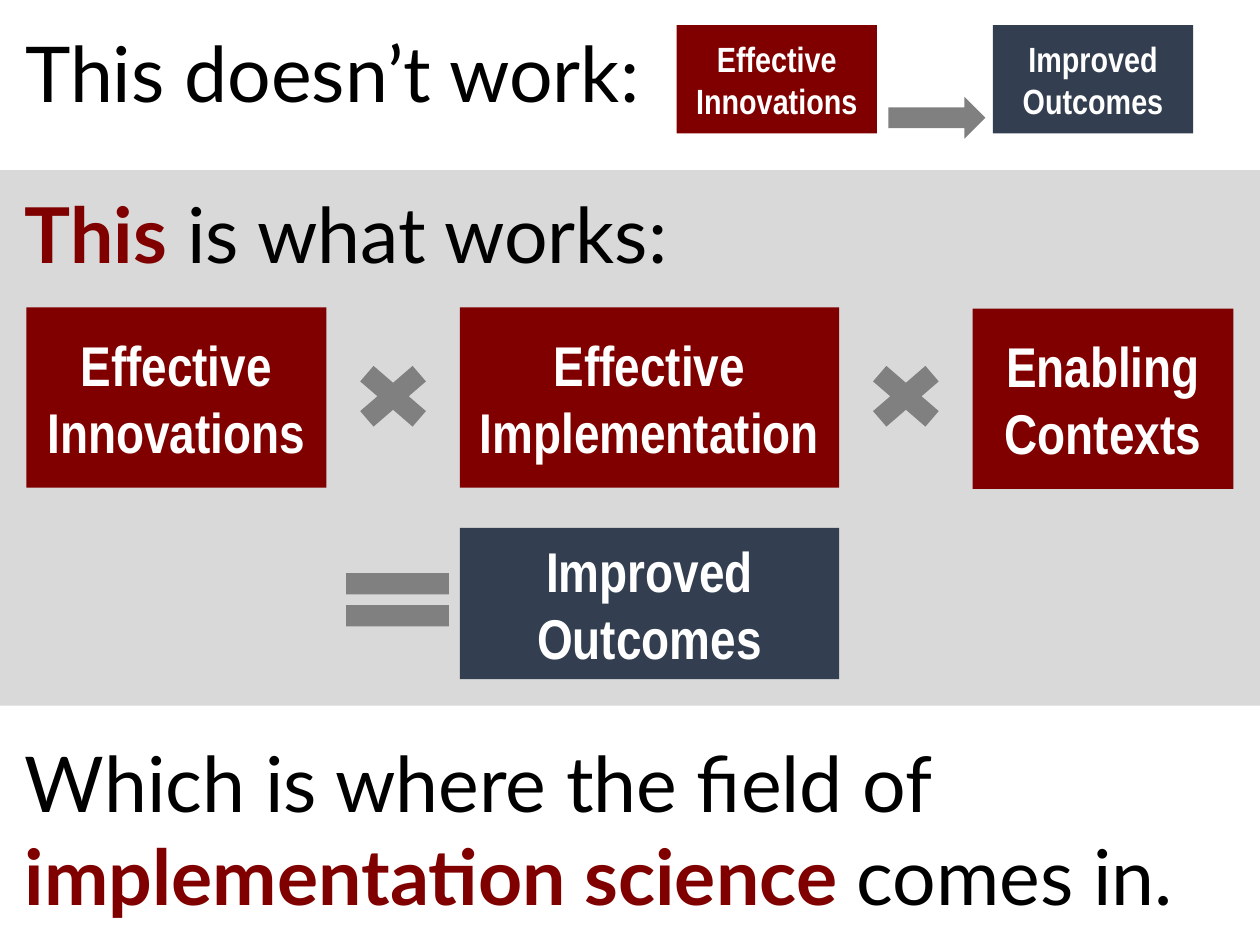
from lxml import etree
from pptx import Presentation
from pptx import util as u
from pptx.dml import color
from pptx.enum import shapes, text
from pptx.oxml import ns

COLORS = {
    "band": "D9D9D9",
    "maroon": "800000",
    "navy": "333F50",
    "symbol": "808080",
    "ink": "000000",
    "white": "FFFFFF",
}
SHAPE = shapes.MSO_SHAPE


def rgb(name):
    """Return the palette colour with the given name."""
    return color.RGBColor.from_string(COLORS[name])


def add_filled(parent, preset, box, fill):
    """Add a flat, borderless preset shape at a box given in inches."""
    shape = parent.add_shape(preset, *map(u.Inches, box))
    shape.shadow.inherit = False
    shape.fill.solid()
    shape.fill.fore_color.rgb = rgb(fill)
    shape.line.fill.background()
    return shape


def add_factor(parent, box, label, fill, size):
    """Add a coloured rectangle with a bold centred label."""
    frame = add_filled(parent, SHAPE.RECTANGLE, box, fill).text_frame
    frame.word_wrap = True
    frame.vertical_anchor = text.MSO_ANCHOR.MIDDLE
    frame.text = label
    for paragraph in frame.paragraphs:
        paragraph.alignment = text.PP_ALIGN.CENTER
        font = paragraph.runs[0].font
        font.name, font.size, font.bold = "Arial Narrow", u.Pt(size), True
        font.color.rgb = rgb("white")


def write_statement(holder, box, parts):
    """Place a statement and write its plain and emphasised parts."""
    holder.left, holder.top, holder.width, holder.height = map(u.Inches, box)
    frame = holder.text_frame
    frame.word_wrap = True
    frame.auto_size = text.MSO_AUTO_SIZE.NONE
    frame.vertical_anchor = text.MSO_ANCHOR.TOP
    frame.margin_left = frame.margin_right = u.Inches(0.1)
    frame.margin_top = frame.margin_bottom = u.Inches(0.1)
    paragraph = frame.paragraphs[0]
    paragraph.space_before, paragraph.space_after = u.Pt(0), u.Pt(24)
    properties = paragraph._p.get_or_add_pPr()
    properties.set("marL", "0")
    properties.set("indent", "0")
    etree.SubElement(properties, ns.qn("a:buNone"))
    for wording, emphasised in parts:
        run = paragraph.add_run()
        run.text = wording
        font = run.font
        font.name, font.size, font.bold = "Lato", u.Pt(44), emphasised
        font.color.rgb = rgb("maroon" if emphasised else "ink")


def add_statement(slide, box, parts):
    """Add a text box holding a statement."""
    write_statement(slide.shapes.add_textbox(0, 0, 0, 0), box, parts)


def add_failing_path(slide, left, top):
    """Draw innovations leading straight to outcomes."""
    path_group = slide.shapes.add_group_shape().shapes
    width, height = 1.59, 0.86
    add_factor(path_group, (left, top, width, height),
               "Effective Innovations", "maroon", 20)
    add_factor(path_group, (left + 2.51, top, width, height),
               "Improved\nOutcomes", "navy", 20)
    add_filled(path_group, SHAPE.RIGHT_ARROW,
               (left + 1.68, top + 0.57, 0.77, 0.33), "symbol")


def add_formula(slide, left, top):
    """Draw the three factors multiplied into improved outcomes."""
    formula = slide.shapes.add_group_shape().shapes
    middle = left + 3.44
    add_factor(formula, (middle, top + 1.75, 3.01, 1.2),
               "Improved\nOutcomes", "navy", 32)
    for x, y, width, label in (
        (left, top, 2.38, "Effective Innovations"),
        (middle, top, 3.01, "Effective Implementation"),
        (left + 7.51, top + 0.01, 2.07, "Enabling Contexts"),
    ):
        add_factor(formula, (x, y, width, 1.43), label, "maroon", 32)
    for x in (left + 2.51, left + 6.58):
        add_filled(formula, SHAPE.MATH_MULTIPLY,
                   (x, top + 0.36, 0.8, 0.69), "symbol")
    add_filled(formula, SHAPE.MATH_EQUAL,
               (left + 2.39, top + 1.96, 1.11, 0.72), "symbol")


def build_slide(deck):
    """Compose the failing path, the working formula and the conclusion."""
    slide = deck.slides.add_slide(deck.slide_layouts[1])
    unused_title = slide.shapes.title._element
    unused_title.getparent().remove(unused_title)
    left, width = 0.1, 9.8

    write_statement(slide.placeholders[1], (left, 0.1, width, 1.29),
                    [("This doesn’t work:", False)])
    add_failing_path(slide, 5.37, 0.2)

    add_filled(slide.shapes, SHAPE.RECTANGLE, (0, 1.35, 10, 4.25), "band")
    add_statement(slide, (left, 1.38, width, 4.11),
                  [("This", True), (" is what works:", False)])
    add_formula(slide, 0.21, 2.44)

    add_statement(slide, (left, 5.74, width, 1.76),
                  [("Which is where the field of ", False),
                   ("implementation science ", True),
                   ("comes in.", False)])


def main():
    """Create and save the presentation."""
    deck = Presentation()
    deck.slide_width, deck.slide_height = u.Inches(10), u.Inches(7.5)
    build_slide(deck)
    deck.save("out.pptx")


if __name__ == "__main__":
    main()
